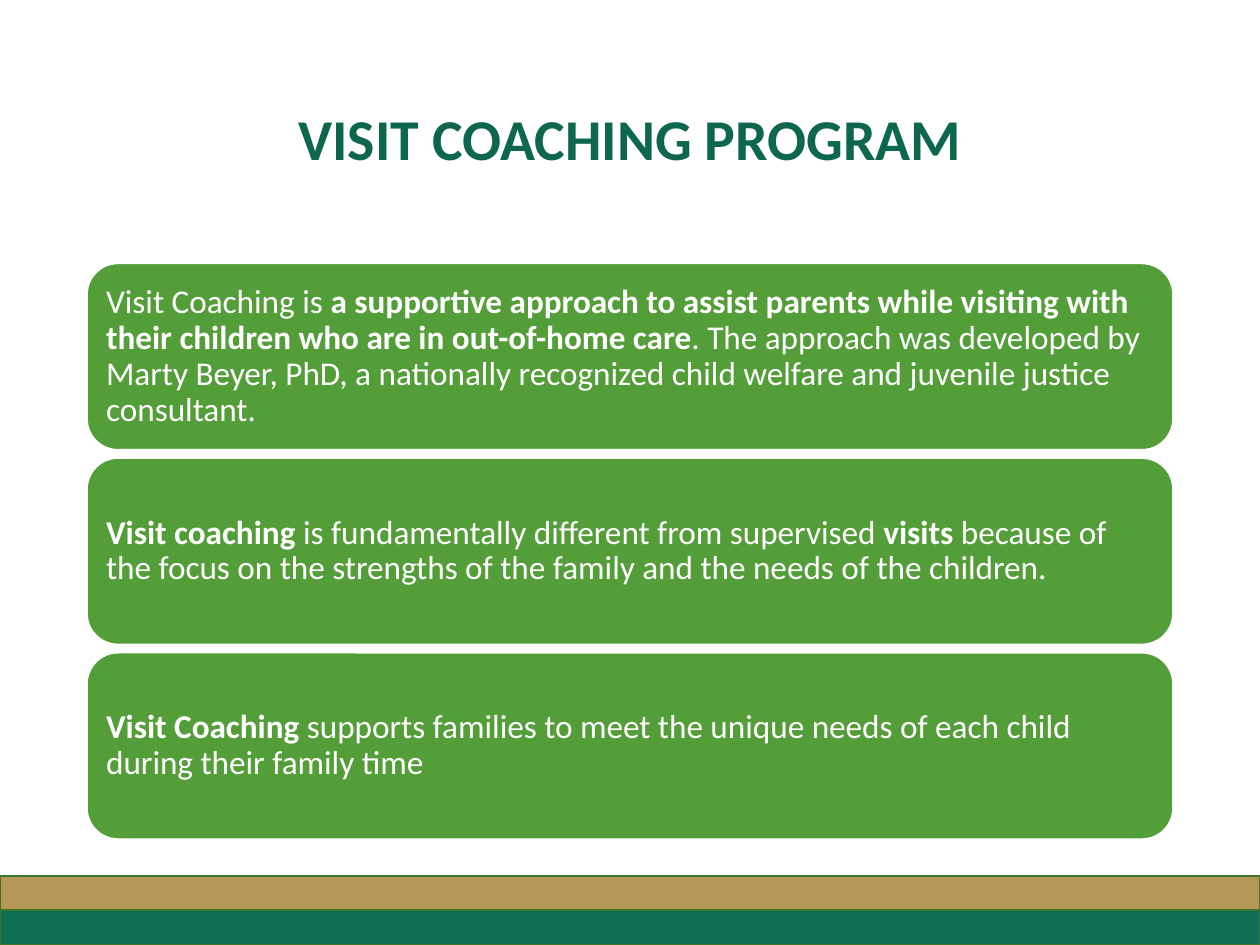
from dataclasses import dataclass

from pptx import Presentation
from pptx.dml.color import RGBColor
from pptx.enum.shapes import MSO_SHAPE
from pptx.enum.text import MSO_ANCHOR, PP_ALIGN
from pptx.util import Inches, Pt

W, H = 10, 7.5
MARGIN = 0.69
CONTENT_W = W - 2 * MARGIN
CARD_TOP, CARD_H, CARD_PITCH = 2.09, 1.48, 1.545
BAND_H = 0.275
FONT = "Calibri"
WHITE = "FFFFFF"


@dataclass
class Run:
    text: str
    bold: bool = False


@dataclass
class Band:
    row: int
    fill: str


BANDS = [Band(1, "0F6F55"), Band(2, "B3985A")]

CARDS = [
    [
        Run("Visit Coaching is "),
        Run("a supportive approach to assist parents while visiting with "
            "their children who are in out-of-home care", True),
        Run(". The approach was developed by Marty Beyer, PhD, a nationally "
            "recognized child welfare and juvenile justice consultant."),
    ],
    [
        Run("Visit coaching", True),
        Run(" is fundamentally different from supervised "),
        Run("visits", True),
        Run(" because of the focus on the strengths of the family "
            "and the needs of the children."),
    ],
    [
        Run("Visit Coaching", True),
        Run(" supports families to meet the unique needs of each child "
            "during their family time"),
    ],
]


def rgb(value: str) -> RGBColor:
    return RGBColor.from_string(value)


def box(s, kind, x: float, y: float, w: float, h: float, fill: str, line: str):
    sp = s.shapes.add_shape(kind, Inches(x), Inches(y), Inches(w), Inches(h))
    sp.shadow.inherit = False
    sp.fill.solid()
    sp.fill.fore_color.rgb = rgb(fill)
    sp.line.color.rgb = rgb(line)
    sp.line.width = Pt(1)
    return sp


def write(tf, runs: list[Run], size: float, color: str, align) -> None:
    tf.word_wrap = True
    tf.vertical_anchor = MSO_ANCHOR.MIDDLE
    p = tf.paragraphs[0]
    p.alignment = align
    p.line_spacing = 0.9
    for run in runs:
        r = p.add_run()
        r.text = run.text
        r.font.name = FONT
        r.font.size = Pt(size)
        r.font.bold = run.bold
        r.font.color.rgb = rgb(color)


def draw_band(s, band: Band) -> None:
    box(s, MSO_SHAPE.RECTANGLE, 0, H - band.row * BAND_H, W, BAND_H,
        band.fill, "3E752A")


def draw_card(s, row: int, runs: list[Run]) -> None:
    sp = box(s, MSO_SHAPE.ROUNDED_RECTANGLE, MARGIN, CARD_TOP + row * CARD_PITCH,
             CONTENT_W, CARD_H, "549E39", WHITE)
    tf = sp.text_frame
    tf.margin_left = tf.margin_right = Inches(0.08)
    tf.margin_top = tf.margin_bottom = Inches(0.08)
    write(tf, runs, 19, WHITE, PP_ALIGN.LEFT)


def draw_title(s, text: str) -> None:
    sp = s.shapes.add_textbox(Inches(MARGIN), Inches(0.4),
                              Inches(CONTENT_W), Inches(1.45))
    write(sp.text_frame, [Run(text, True)], 33, "0D674E", PP_ALIGN.CENTER)


def main() -> None:
    prs = Presentation()
    prs.slide_width, prs.slide_height = Inches(W), Inches(H)
    s = prs.slides.add_slide(prs.slide_layouts[6])
    for band in BANDS:
        draw_band(s, band)
    for row, runs in enumerate(CARDS):
        draw_card(s, row, runs)
    draw_title(s, "VISIT COACHING PROGRAM")
    prs.save("out.pptx")


if __name__ == "__main__":
    main()
